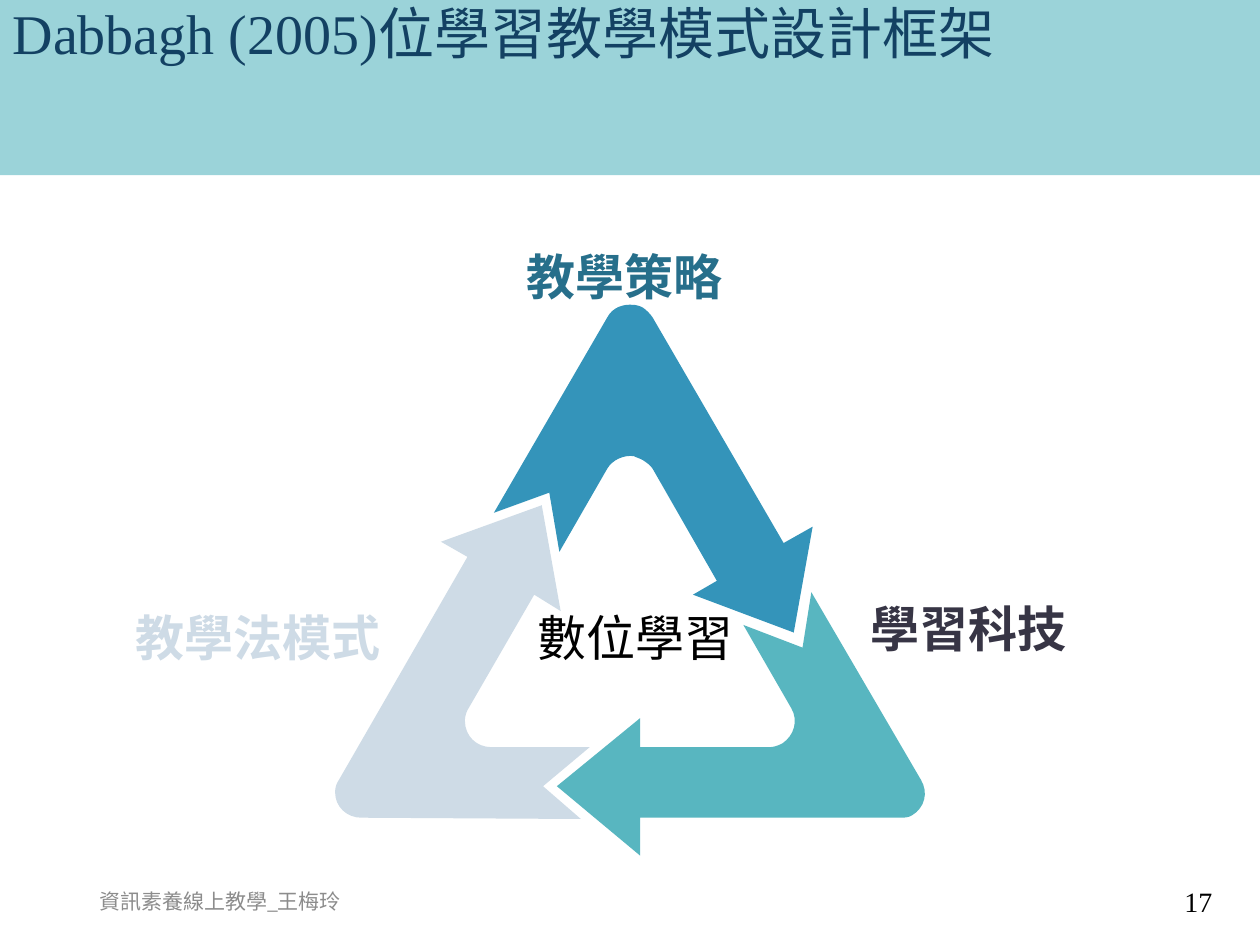
import pptx
import pptx.dml.color
import pptx.enum.text
import pptx.util

Inches = pptx.util.Inches
Align = pptx.enum.text.PP_ALIGN
Anchor = pptx.enum.text.MSO_ANCHOR
AutoSize = pptx.enum.text.MSO_AUTO_SIZE

SERIF = "Times New Roman"
CURVE_STEPS = 8

# Outlines in inches from the cycle's corner: (x, y) is a straight step,
# six numbers are a Bezier step (two control points, then the end).
STRATEGY_ARROW = [
    (2.37, 0), (2.39, 0, 2.42, 0.01, 2.44, 0.02),
    (2.47, 0.04, 2.5, 0.07, 2.52, 0.1),
    (3.56, 1.89), (3.79, 1.76), (3.64, 2.6), (2.84, 2.3), (3.03, 2.19),
    (2.52, 1.3), (2.5, 1.27, 2.47, 1.25, 2.44, 1.23),
    (2.42, 1.22, 2.39, 1.21, 2.37, 1.2),
    (2.29, 1.19, 2.2, 1.23, 2.16, 1.3),
    (1.78, 1.96), (1.7, 1.49), (1.26, 1.65), (2.16, 0.1),
    (2.2, 0.02, 2.29, -0.01, 2.37, 0),
]
TECHNOLOGY_ARROW = [
    (3.78, 2.28), (4.65, 3.77), (4.71, 3.87, 4.68, 3.99, 4.58, 4.05),
    (4.55, 4.07, 4.51, 4.07, 4.47, 4.07),
    (2.42, 4.07), (2.42, 4.37), (1.76, 3.82), (2.42, 3.28), (2.42, 3.51),
    (3.44, 3.51), (3.48, 3.51, 3.51, 3.5, 3.55, 3.48),
    (3.64, 3.42, 3.68, 3.3, 3.62, 3.2), (3.24, 2.54), (3.71, 2.72),
]
PEDAGOGY_ARROW = [
    (1.64, 1.59), (1.79, 2.43), (1.58, 2.3), (1.06, 3.2),
    (1.04, 3.23, 1.03, 3.27, 1.03, 3.3),
    (1.03, 3.42, 1.12, 3.51, 1.24, 3.51),
    (2.02, 3.51), (1.65, 3.82), (1.95, 4.08), (0.21, 4.07),
    (0.09, 4.07, 0, 3.98, 0, 3.87), (0, 3.83, 0.01, 3.8, 0.03, 3.77),
    (1.05, 2), (0.84, 1.88),
]


def color(value):
    return pptx.dml.color.RGBColor.from_string(value)


def format_text(para, size, font, value, bold=False):
    for span in para.runs:
        span.font.size = pptx.util.Pt(size)
        span.font.name = font
        span.font.bold = bold
        span.font.color.rgb = color(value)


def add_title(page, left, top, width, height):
    title = page.shapes.title
    title.left, title.top, title.width, title.height = left, top, width, height
    title.fill.solid()
    title.fill.fore_color.rgb = color("9BD3D9")
    frame = title.text_frame
    frame.text = "Dabbagh (2005)位學習教學模式設計框架"
    frame.auto_size = AutoSize.NONE
    frame.word_wrap = True
    frame.vertical_anchor = Anchor.TOP
    para = frame.paragraphs[0]
    para.alignment = Align.LEFT
    para.line_spacing = 0.9
    format_text(para, 32, SERIF, "134163")


def add_text(page, text, left, top, width, height, size, font, value,
             bold=False, align=Align.LEFT, anchor=Anchor.TOP, wrap=True):
    box = page.shapes.add_textbox(left, top, width, height)
    frame = box.text_frame
    frame.text = text
    frame.word_wrap = wrap
    frame.vertical_anchor = anchor
    para = frame.paragraphs[0]
    para.alignment = align
    format_text(para, size, font, value, bold)
    return box


def flatten(outline):
    """Turn straight and Bezier steps into a list of points."""
    points = [outline[0]]
    for step in outline[1:]:
        if len(step) == 2:
            points.append(step)
            continue
        controls = [points[-1], step[:2], step[2:4], step[4:]]
        for index in range(1, CURVE_STEPS + 1):
            t = index / CURVE_STEPS
            weights = ((1 - t) ** 3, 3 * t * (1 - t) ** 2,
                       3 * t ** 2 * (1 - t), t ** 3)
            points.append(tuple(
                sum(weight * point[axis]
                    for weight, point in zip(weights, controls))
                for axis in (0, 1)))
    return points


def add_arrow(page, left, top, outline, fill):
    points = [(left + Inches(x), top + Inches(y)) for x, y in flatten(outline)]
    builder = page.shapes.build_freeform(*points[0])
    builder.add_line_segments(points[1:], close=True)
    arrow = builder.convert_to_shape()
    arrow.shadow.inherit = False
    arrow.fill.solid()
    arrow.fill.fore_color.rgb = color(fill)
    arrow.line.fill.background()


def add_cycle(page, left, top):
    """Place three arrows in a triangle, with a label at each and in the centre."""
    for outline, fill in ((STRATEGY_ARROW, "3494BA"),
                          (TECHNOLOGY_ARROW, "58B6C0"),
                          (PEDAGOGY_ARROW, "CEDBE6")):
        add_arrow(page, left, top, outline, fill)

    labels = (
        ("數位學習", 1.51, 2.35, 1.83, "Arial", "000000", False),
        ("教學法模式", -1.68, 2.35, 2.17, SERIF, "CEDBE6", True),
        ("教學策略", 1.42, -0.51, 1.78, SERIF, "276F8B", True),
        ("學習科技", 4.15, 2.28, 1.78, SERIF, "373545", True),
    )
    for text, x, y, width, font, value, bold in labels:
        label = add_text(page, text, left + Inches(x), top + Inches(y),
                         Inches(width), Inches(0.57), 28, font, value,
                         bold, wrap=not bold)
        label.text_frame.auto_size = AutoSize.SHAPE_TO_FIT_TEXT


def add_footer(page, left, top, width, height):
    part = Inches(2.25)
    add_text(page, "資訊素養線上教學_王梅玲", left, top, part, height,
             12, "Calibri", "8C8C8C", anchor=Anchor.MIDDLE)
    add_text(page, "17", left + width - part, top, part, height,
             16, SERIF, "000000", align=Align.RIGHT, anchor=Anchor.MIDDLE)


def main():
    deck = pptx.Presentation()
    deck.slide_width, deck.slide_height = Inches(10), Inches(7.5)
    page = deck.slides.add_slide(deck.slide_layouts[5])
    add_title(page, 0, 0, deck.slide_width, Inches(1.39))
    add_footer(page, Inches(0.69), Inches(6.95), Inches(9.03), Inches(0.4))
    add_cycle(page, Inches(2.66), Inches(2.42))
    deck.save("out.pptx")


if __name__ == "__main__":
    main()
